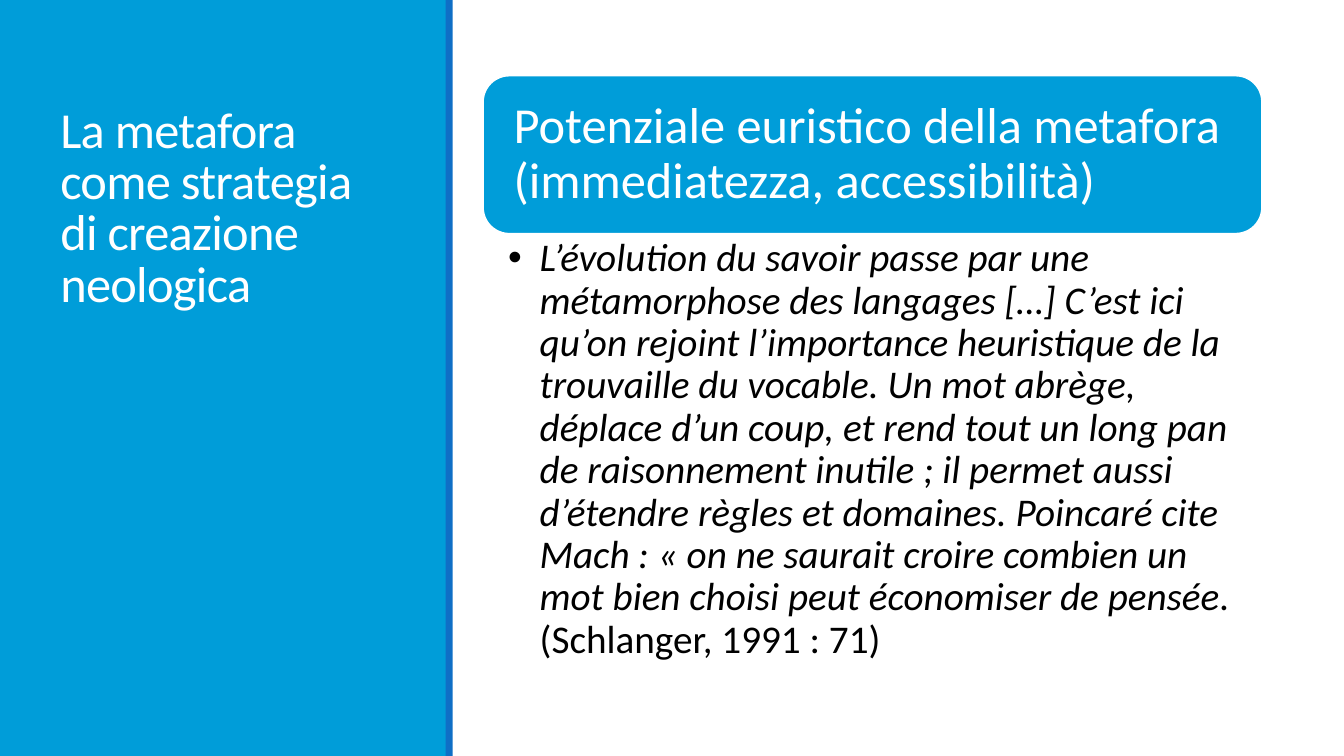
"""Build the slide on metaphor as a strategy for coining new words."""
from lxml import etree
from pptx import Presentation
from pptx.dml.color import RGBColor
from pptx.enum.shapes import MSO_SHAPE
from pptx.enum.text import MSO_ANCHOR, PP_ALIGN
from pptx.oxml.ns import qn
from pptx.util import Pt

RECT, ROUND = MSO_SHAPE.RECTANGLE, MSO_SHAPE.ROUNDED_RECTANGLE
TOP, MIDDLE, BOTTOM = MSO_ANCHOR.TOP, MSO_ANCHOR.MIDDLE, MSO_ANCHOR.BOTTOM
LEFT = PP_ALIGN.LEFT
COLORS = {"sky": "009DD9", "blue": "0F6FC6", "white": "FFFFFF", "black": "000000"}

TITLE = "La metafora come strategia di creazione neologica"
HEAD = "Potenziale euristico della metafora (immediatezza, accessibilità)"
QUOTE = (
    "L’évolution du savoir passe par une métamorphose des langages […] "
    "C’est ici qu’on rejoint l’importance heuristique de la trouvaille du vocable. "
    "Un mot abrège, déplace d’un coup, et rend tout un long pan de raisonnement "
    "inutile ; il permet aussi d’étendre règles et domaines. Poincaré cite "
    "Mach : « on ne saurait croire combien un mot bien choisi peut "
    "économiser de pensée"
)
SOURCE = ". (Schlanger, 1991 : 71)"


def add_block(kind, box, fill):
    block = slide.shapes.add_shape(kind, *[Pt(v) for v in box])
    block.shadow.inherit = False
    block.fill.solid()
    block.fill.fore_color.rgb = RGBColor.from_string(COLORS[fill])
    block.line.fill.background()
    return block


def set_text(shape, texts, size, color, anchor, insets, spacing):
    frame = shape.text_frame
    frame.word_wrap = True
    frame.vertical_anchor = anchor
    (frame.margin_left, frame.margin_top,
     frame.margin_right, frame.margin_bottom) = [Pt(v) for v in insets]
    para = frame.paragraphs[0]
    para.alignment = LEFT
    para.line_spacing = spacing
    for text in texts:
        run = para.add_run()
        run.text = text
        run.font.size = Pt(size)
        run.font.name = "Calibri"
        run.font.color.rgb = RGBColor.from_string(COLORS[color])
    return para


deck = Presentation()
deck.slide_width, deck.slide_height = Pt(960), Pt(540)
slide = deck.slides.add_slide(deck.slide_layouts[6])

add_block(RECT, (0, 0, 319, 540), "sky")
add_block(RECT, (318.4, 0, 5, 540), "blue")

title = slide.shapes.add_textbox(Pt(36), Pt(46.8), Pt(252), Pt(180))
para = set_text(title, [TITLE], 36, "white", BOTTOM, (7.2, 3.6, 7.2, 3.6), 0.85)
para.runs[0].font._element.set("spc", "-50")

head = add_block(ROUND, (345, 54, 556.5, 113), "sky")
head.line.color.rgb = RGBColor.from_string(COLORS["white"])
head.line.width = Pt(1.25)
set_text(head, [HEAD], 36, "white", MIDDLE, (16.4, 16, 16.4, 16), 0.9)

quote = slide.shapes.add_textbox(Pt(345), Pt(166.5), Pt(556.5), Pt(317))
para = set_text(quote, [QUOTE, SOURCE], 28, "black", TOP, (18, 3.6, 20, 3.6), 0.9)
para.runs[0].font.italic = True
props = para._p.get_or_add_pPr()
props.set("marL", str(Pt(22.5)))
props.set("indent", str(-Pt(22.5)))
etree.SubElement(props, qn("a:buFont")).set("typeface", "Arial")
etree.SubElement(props, qn("a:buChar")).set("char", "•")

deck.save("out.pptx")
